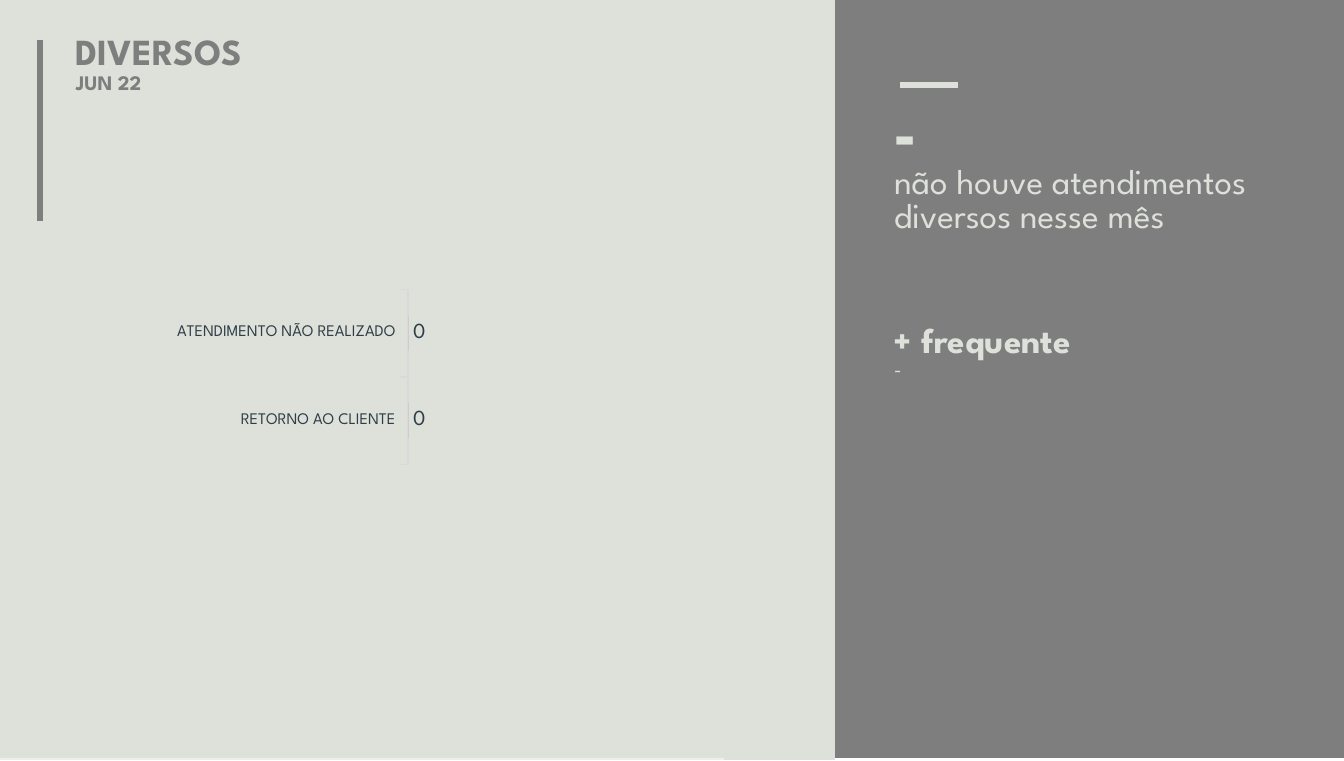
"""Build the monthly slide on miscellaneous customer contacts."""
from lxml import etree
from pptx import Presentation, util as u
from pptx.chart import data as chart_data
from pptx.dml import color
from pptx.enum import chart as ch, shapes
from pptx.oxml import ns

FONT = "League Spartan"
PALE, GRAY, INK, AXIS = "DDE1DA", "7E7E7E", "2E3D46", "D9D9D9"
PX = 914400 / 129.2


def px(*lengths):
    return [round(length * PX) for length in lengths]


def rgb(value):
    return color.RGBColor.from_string(value)


deck = Presentation()
deck.slide_width, deck.slide_height = px(1344, 761)
slide = deck.slides.add_slide(deck.slide_layouts[6])

for box, fill in [
    ((0, 0, 835, 760), PALE),
    ((835, 0, 509, 758), GRAY),
    ((0, 758, 724, 2), "EDEFEB"),
]:
    panel = slide.shapes.add_shape(shapes.MSO_SHAPE.RECTANGLE, *px(*box))
    panel.shadow.inherit = False
    panel.fill.solid()
    panel.fill.fore_color.rgb = rgb(fill)
    panel.line.fill.background()

for ends, stroke in [((40, 40, 40, 221), GRAY), ((900, 85, 958, 85), PALE)]:
    accent = slide.shapes.add_connector(shapes.MSO_CONNECTOR.STRAIGHT, *px(*ends))
    accent.line.color.rgb = rgb(stroke)
    accent.line.width = u.Pt(3.6)
    etree.SubElement(accent._element.spPr, ns.qn("a:effectLst"))

contacts = chart_data.CategoryChartData(number_format="0")
contacts.categories = ["ATENDIMENTO NÃO REALIZADO", "RETORNO AO CLIENTE"]
contacts.add_series("Atendimentos", (0, 0))
chart = slide.shapes.add_chart(
    ch.XL_CHART_TYPE.BAR_CLUSTERED, *px(100, 280, 700, 194), contacts
).chart
chart.has_legend = False
chart.has_title = False
chart.font.name = FONT
chart.font.size = u.Pt(9)
chart.font.color.rgb = rgb(INK)

reasons = chart.category_axis
reasons.reverse_order = True
reasons.major_tick_mark = ch.XL_TICK_MARK.OUTSIDE
reasons.format.line.color.rgb = rgb(AXIS)
reasons.format.line.width = u.Pt(0.6)
counts = chart.value_axis
counts.minimum_scale, counts.maximum_scale = 0, 1
counts.has_major_gridlines = False
counts.visible = False

bars = chart.plots[0]
bars.vary_by_categories = False
bars.series[0].format.fill.solid()
bars.series[0].format.fill.fore_color.rgb = rgb(GRAY)
bars.has_data_labels = True
totals = bars.data_labels
totals.show_value = True
totals.position = ch.XL_LABEL_POSITION.OUTSIDE_END
totals.font.name = FONT
totals.font.size = u.Pt(12)
totals.font.color.rgb = rgb(INK)

plot_area = chart._chartSpace.chart.plotArea
for old_layout in plot_area.findall(ns.qn("c:layout")):
    plot_area.remove(old_layout)
layout = etree.Element(ns.qn("c:layout"))
manual = etree.SubElement(layout, ns.qn("c:manualLayout"))
for tag, setting in [
    ("layoutTarget", "inner"), ("xMode", "edge"), ("yMode", "edge"),
    ("x", "0.44"), ("y", "0.05"), ("w", "0.55"), ("h", "0.9"),
]:
    etree.SubElement(manual, ns.qn(f"c:{tag}")).set("val", setting)
plot_area.insert(0, layout)

for box, inset, ink, lines in [
    ((71, 28, 752, 97), (5, 3), GRAY,
     [("DIVERSOS", 20.5, True, 1.1, u.Pt(23.2)), ("JUN 22", 11.5, True, 0, u.Pt(12.4))]),
    ((894, 89, 40, 80), (0, 3), PALE, [("-", 35.5, True, 1.1, 1.0)]),
    ((894, 158, 379, 114), (0, 9), PALE,
     [("não houve atendimentos diversos nesse mês", 19.5, False, 5.3, 0.81)]),
    ((894, 317, 194, 45), (0, 1), PALE, [("+ frequente", 19.5, True, 0.9, 1.0)]),
    ((894, 354, 20, 28), (0, 3), PALE, [("-", 11, False, 1.4, 1.0)]),
]:
    frame = slide.shapes.add_textbox(*px(*box)).text_frame
    frame.word_wrap = True
    frame.margin_left, frame.margin_top = px(*inset)
    frame.margin_right = frame.margin_bottom = 0
    for index, (wording, size, bold, before, spacing) in enumerate(lines):
        line = frame.add_paragraph() if index else frame.paragraphs[0]
        line.space_before = u.Pt(before)
        line.line_spacing = spacing
        run = line.add_run()
        run.text = wording
        run.font.name = FONT
        run.font.size = u.Pt(size)
        run.font.bold = bold
        run.font.color.rgb = rgb(ink)

deck.save("out.pptx")
